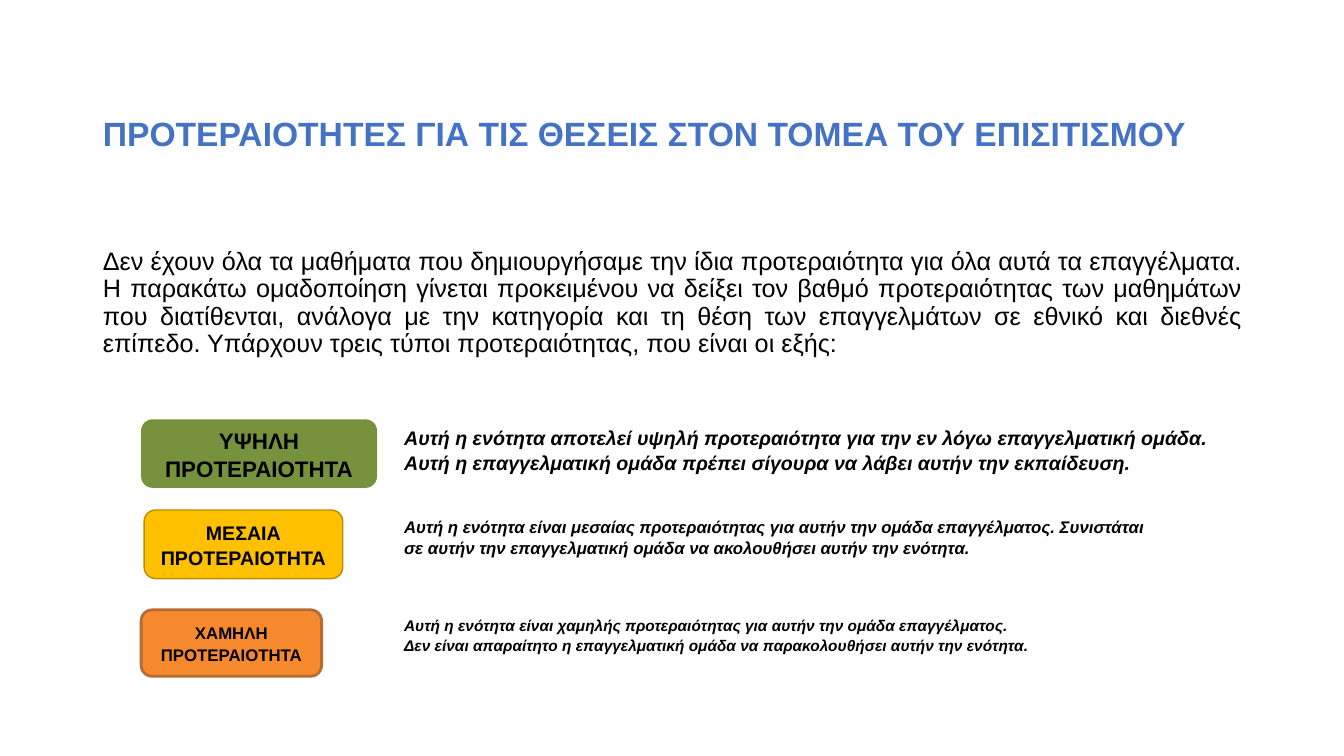
import pptx
import pptx.util
import pptx.dml.color
import pptx.enum.shapes
import pptx.enum.text
import pptx.oxml.ns
import lxml.etree

Inches = pptx.util.Inches
ALIGN = pptx.enum.text.PP_ALIGN
ANCHOR = pptx.enum.text.MSO_ANCHOR
FIT = pptx.enum.text.MSO_AUTO_SIZE
COLORS = {
    "title": "4472C4", "text": "000000",
    "high": "76923C", "mid": "FFC000", "mid line": "BA8C00",
    "low": "F6882E", "low line": "B46D33",
}


def color(name):
    return pptx.dml.color.RGBColor.from_string(COLORS[name])


def write(shape, lines, size, align, space, tone="text", bold=True, slant=False):
    """Fill a shape with one formatted paragraph per line."""
    frame = shape.text_frame
    frame.word_wrap = True
    frame.text = "\n".join(lines)
    for para in frame.paragraphs:
        para.alignment = align
        para.line_spacing = space
        para.space_before = pptx.util.Pt(0)
        for run in para.runs:
            font = run.font
            font.name = "Arial"
            font.size = pptx.util.Pt(size)
            font.bold = bold
            font.italic = slant
            font.color.rgb = color(tone)
    return frame


deck = pptx.Presentation()
deck.slide_width = Inches(13.33)
deck.slide_height = Inches(7.5)
slide = deck.slides.add_slide(deck.slide_layouts[1])

# Title and introduction
title = slide.shapes.title
intro = slide.placeholders[1]
for holder, top in ((title, 0.79), (intro, 2.42)):
    holder.left, holder.top = Inches(0.92), Inches(top)
    holder.width, holder.height = Inches(11.5), Inches(1.56)

frame = write(title, ["ΠΡΟΤΕΡΑΙΟΤΗΤΕΣ ΓΙΑ ΤΙΣ ΘΕΣΕΙΣ ΣΤΟΝ ΤΟΜΕΑ ΤΟΥ ΕΠΙΣΙΤΙΣΜΟΥ"],
              24, ALIGN.LEFT, 0.9, "title")
frame.auto_size = FIT.NONE
frame.vertical_anchor = ANCHOR.MIDDLE
frame.margin_bottom = Inches(0.5)

frame = write(intro, [
    "Δεν έχουν όλα τα μαθήματα που δημιουργήσαμε την ίδια προτεραιότητα για όλα "
    "αυτά τα επαγγέλματα. Η παρακάτω ομαδοποίηση γίνεται προκειμένου να δείξει "
    "τον βαθμό προτεραιότητας των μαθημάτων που διατίθενται, ανάλογα με την "
    "κατηγορία και τη θέση των επαγγελμάτων σε εθνικό και διεθνές επίπεδο. "
    "Υπάρχουν τρεις τύποι προτεραιότητας, που είναι οι εξής:"],
    18, ALIGN.JUSTIFY, 0.9, bold=False)
frame.auto_size = FIT.NONE
props = frame.paragraphs[0]._p.get_or_add_pPr()
props.set("marL", "0")
props.set("indent", "0")
lxml.etree.SubElement(props, pptx.oxml.ns.qn("a:buNone"))

# Priority levels: name, label, left, top, width, height, label size, line width,
# note width, note height, note size, note lines
levels = [
    ("high", "ΥΨΗΛΗ", 1.4, 4.16, 2.34, 0.68, 16, 0, 8.5, 0.89, 14,
     ["Αυτή η ενότητα αποτελεί υψηλή προτεραιότητα για την εν λόγω επαγγελματική ομάδα.",
      "Αυτή η επαγγελματική ομάδα πρέπει σίγουρα να λάβει αυτήν την εκπαίδευση."]),
    ("mid", "ΜΕΣΑΙΑ", 1.43, 5.06, 1.97, 0.68, 14, 1, 7.72, 0.79, 12,
     ["Αυτή η ενότητα είναι μεσαίας προτεραιότητας για αυτήν την ομάδα επαγγέλματος. "
      "Συνιστάται σε αυτήν την επαγγελματική ομάδα να ακολουθήσει αυτήν την ενότητα."]),
    ("low", "ΧΑΜΗΛΗ", 1.4, 6.05, 1.79, 0.66, 12, 2, 8.5, 0.71, 11,
     ["Αυτή η ενότητα είναι χαμηλής προτεραιότητας για αυτήν την ομάδα επαγγέλματος.",
      "Δεν είναι απαραίτητο η επαγγελματική ομάδα να παρακολουθήσει αυτήν την ενότητα."]),
]
for name, label, left, top, width, height, size, line, wide, tall, small, lines in levels:
    badge = slide.shapes.add_shape(
        pptx.enum.shapes.MSO_SHAPE.ROUNDED_RECTANGLE,
        Inches(left), Inches(top), Inches(width), Inches(height))
    badge.shadow.inherit = False
    badge.fill.solid()
    badge.fill.fore_color.rgb = color(name)
    if line:
        badge.line.color.rgb = color(name + " line")
        badge.line.width = pptx.util.Pt(line)
    else:
        badge.line.fill.background()
    frame = write(badge, [label + " ΠΡΟΤΕΡΑΙΟΤΗΤΑ"], size, ALIGN.CENTER, 1.07)
    frame.vertical_anchor = ANCHOR.MIDDLE

    note = slide.shapes.add_textbox(
        Inches(3.91), Inches(top), Inches(wide), Inches(tall))
    write(note, lines, small, ALIGN.LEFT, 1.07, slant=True)

deck.save("out.pptx")
